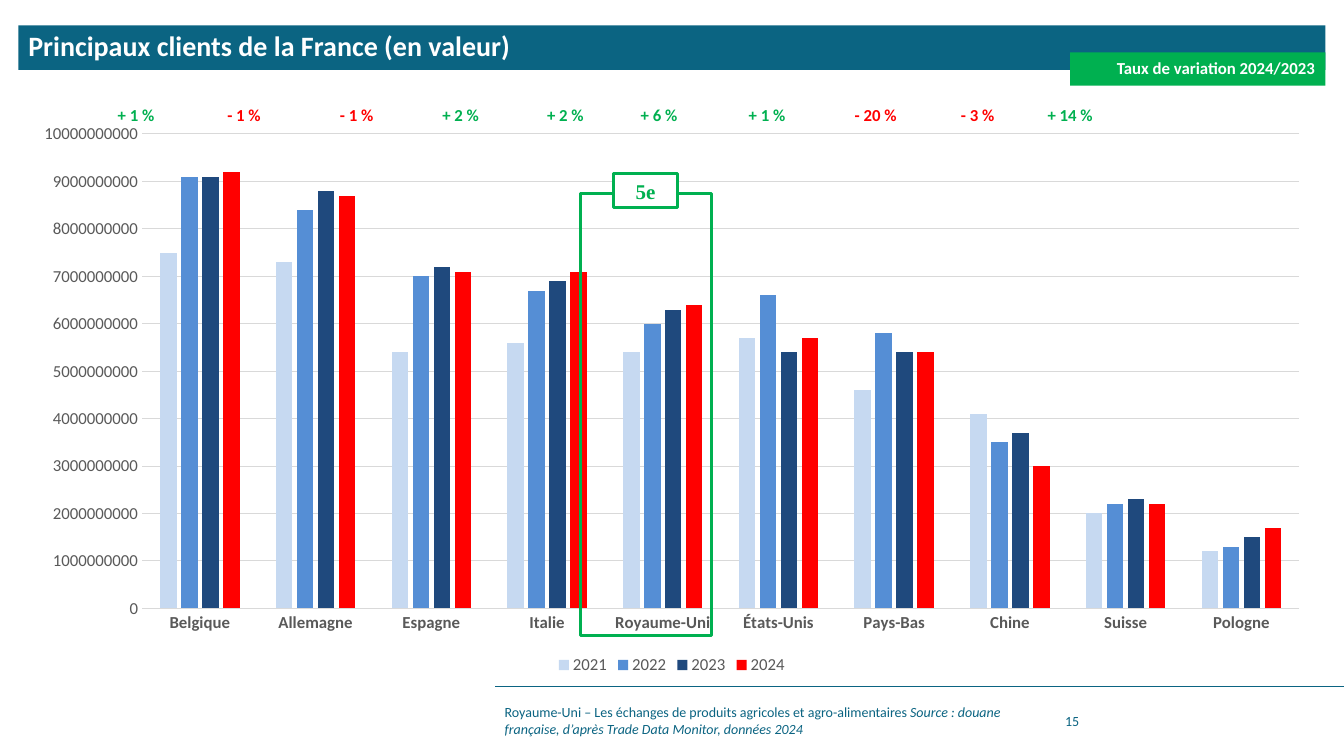
from lxml import etree
from pptx import Presentation
from pptx.chart.data import CategoryChartData
from pptx.dml.color import RGBColor
from pptx.enum.chart import XL_CHART_TYPE, XL_LEGEND_POSITION, XL_TICK_MARK
from pptx.enum.shapes import MSO_CONNECTOR, MSO_SHAPE
from pptx.enum.text import MSO_ANCHOR, MSO_AUTO_SIZE, PP_ALIGN
from pptx.oxml.ns import qn
from pptx.util import Cm, Pt

COLUMNS = XL_CHART_TYPE.COLUMN_CLUSTERED
LEGEND_BOTTOM = XL_LEGEND_POSITION.BOTTOM
NO_TICK = XL_TICK_MARK.NONE
STRAIGHT = MSO_CONNECTOR.STRAIGHT
RECT = MSO_SHAPE.RECTANGLE
TOP, MIDDLE = MSO_ANCHOR.TOP, MSO_ANCHOR.MIDDLE
NO_FIT = MSO_AUTO_SIZE.NONE
LEFT, CENTER, RIGHT = PP_ALIGN.LEFT, PP_ALIGN.CENTER, PP_ALIGN.RIGHT

TEAL, GREEN, RED, WHITE = "0B6482", "00B050", "FF0000", "FFFFFF"
GREY, GRID = "595959", "D9D9D9"

COUNTRIES = ["Belgique", "Allemagne", "Espagne", "Italie", "Royaume-Uni",
             "États-Unis", "Pays-Bas", "Chine", "Suisse", "Pologne"]
EXPORTS = {
    "2021": ("C6D9F1", [7.5, 7.3, 5.4, 5.6, 5.4, 5.7, 4.6, 4.1, 2.0, 1.2]),
    "2022": ("558ED5", [9.1, 8.4, 7.0, 6.7, 6.0, 6.6, 5.8, 3.5, 2.2, 1.3]),
    "2023": ("1F497D", [9.1, 8.8, 7.2, 6.9, 6.3, 5.4, 5.4, 3.7, 2.3, 1.5]),
    "2024": (RED, [9.2, 8.7, 7.1, 7.1, 6.4, 5.7, 5.4, 3.0, 2.2, 1.7]),
}
RATES = [("+ 1 %", 1.78), ("- 1 %", 4.5), ("- 1 %", 7.34), ("+ 2 %", 9.96),
         ("+ 2 %", 12.6), ("+ 6 %", 14.96), ("+ 1 %", 17.68),
         ("- 20 %", 20.42), ("- 3 %", 22.99), ("+ 14 %", 25.32)]


def rgb(value):
    """Return the colour for a hex string."""
    return RGBColor.from_string(value)


def style_font(font, size, color, bold=False, italic=False, name="Calibri"):
    """Set the face, size, colour and weight of a font."""
    font.name, font.size, font.bold, font.italic = name, Pt(size), bold, italic
    font.color.rgb = rgb(color)


def add_run(p, text, *style, **options):
    """Append a styled run to a paragraph."""
    r = p.add_run()
    r.text = text
    style_font(r.font, *style, **options)
    return r


def add_text_box(s, x, y, w, h, anchor):
    """Add a wrapping text box and return its first paragraph."""
    tf = s.shapes.add_textbox(Cm(x), Cm(y), Cm(w), Cm(h)).text_frame
    tf.word_wrap = True
    tf.vertical_anchor = anchor
    return tf.paragraphs[0]


def place_banner(sp, x, y, w, h, text, size, fill, align):
    """Turn a placeholder into a filled one-line banner."""
    sp.left, sp.top, sp.width, sp.height = Cm(x), Cm(y), Cm(w), Cm(h)
    sp.fill.solid()
    sp.fill.fore_color.rgb = rgb(fill)
    tf = sp.text_frame
    tf.auto_size, tf.vertical_anchor, tf.word_wrap = NO_FIT, MIDDLE, True
    p = tf.paragraphs[0]
    pPr = p._p.get_or_add_pPr()
    pPr.set("marL", "0")
    pPr.set("indent", "0")
    etree.SubElement(pPr, qn("a:buNone"))
    p.alignment, p.line_spacing, p.space_before = align, 0.9, Pt(0)
    add_run(p, text, size, WHITE, True)


def add_footer(s, x, y, w, h):
    """Add the rule, the source line and the page number."""
    line = s.shapes.add_connector(STRAIGHT, Cm(x + w), Cm(y), Cm(x), Cm(y))
    line.line.color.rgb = rgb(TEAL)
    line.line.width = Pt(0.5)
    etree.SubElement(line._element.spPr, qn("a:effectLst"))
    p = add_text_box(s, x, y + 0.35, 13.79, h - 0.35, MIDDLE)
    add_run(p, "Royaume-Uni – Les échanges de produits agricoles et "
               "agro-alimentaires ", 10, TEAL)
    add_run(p, "Source : douane française, d’après Trade Data Monitor, "
               "données 2024", 10, TEAL, italic=True)
    p = add_text_box(s, x + 14.12, y + 0.35, 2.51, h - 0.35, MIDDLE)
    add_run(p, "15", 10, TEAL)


def add_rates(s, x, y, w, h):
    """Add the row of growth rates on centred tab stops."""
    p = add_text_box(s, x, y, w, h, TOP)
    tabs = etree.SubElement(p._p.get_or_add_pPr(), qn("a:tabLst"))
    for rate, stop in RATES:
        etree.SubElement(tabs, qn("a:tab"), pos=str(Cm(stop)), algn="ctr")
        add_run(p, "\t" + rate, 12, GREEN if rate.startswith("+") else RED, True)


def add_export_chart(s, x, y, w, h):
    """Add the clustered columns of exports by country and year."""
    data = CategoryChartData(number_format="General")
    data.categories = COUNTRIES
    for year, (_, billions) in EXPORTS.items():
        data.add_series(year, [round(b * 10) * 10**8 for b in billions])
    chart = s.shapes.add_chart(COLUMNS, Cm(x), Cm(y), Cm(w), Cm(h), data).chart
    chart.has_title = False
    style_font(chart.font, 12, GREY)
    plot = chart.plots[0]
    plot.gap_width, plot.overlap, plot.vary_by_categories = 219, -27, False
    for series, (color, _) in zip(plot.series, EXPORTS.values()):
        series.format.fill.solid()
        series.format.fill.fore_color.rgb = rgb(color)
    cat, val = chart.category_axis, chart.value_axis
    for axis in (cat, val):
        axis.major_tick_mark = axis.minor_tick_mark = NO_TICK
        style_font(axis.tick_labels.font, 12, GREY, axis is cat)
    val.minimum_scale, val.maximum_scale, val.major_unit = 0, 10**10, 10**9
    val.format.line.fill.background()
    for line in (cat.format.line, val.major_gridlines.format.line):
        line.color.rgb = rgb(GRID)
        line.width = Pt(0.75)
    chart.has_legend = True
    chart.legend.position = LEGEND_BOTTOM
    chart.legend.include_in_layout = False
    style_font(chart.legend.font, 12, GREY)


def add_outlined_box(s, x, y, w, h):
    """Add a rectangle with a thick green outline."""
    sp = s.shapes.add_shape(RECT, Cm(x), Cm(y), Cm(w), Cm(h))
    sp.shadow.inherit = False
    sp.fill.background()
    sp.line.color.rgb = rgb(GREEN)
    sp.line.width = Pt(2.25)
    return sp


def add_highlight(s, x, y, w, h):
    """Frame one country and label the frame with its rank."""
    add_outlined_box(s, x, y, w, h)
    badge = add_outlined_box(s, x + 0.84, y - 0.51, 1.6, 0.86)
    badge.fill.solid()
    badge.fill.fore_color.rgb = rgb(WHITE)
    badge.text_frame.vertical_anchor = TOP
    p = badge.text_frame.paragraphs[0]
    p.alignment = CENTER
    add_run(p, "5e", 15, GREEN, True, name="Times New Roman")


def build_slide(prs):
    """Build the slide on the main customers of France."""
    s = prs.slides.add_slide(prs.slide_layouts[1])
    add_footer(s, 12.47, 17.3, 21.4, 1.37)
    place_banner(s.shapes.title, 0.46, 0.64, 32.94, 1.12,
                 "Principaux clients de la France (en valeur)", 20, TEAL, LEFT)
    place_banner(s.placeholders[1], 26.97, 1.32, 6.43, 0.84,
                 "Taux de variation 2024/2023", 12, GREEN, RIGHT)
    add_rates(s, 1.4, 2.51, 31.06, 0.86)
    add_export_chart(s, 0.46, 2.84, 32.94, 14.27)
    add_highlight(s, 14.63, 4.88, 3.3, 11.13)


def main():
    """Create the presentation and save it."""
    prs = Presentation()
    prs.slide_width, prs.slide_height = Cm(33.87), Cm(19.05)
    build_slide(prs)
    prs.save("out.pptx")


if __name__ == "__main__":
    main()
